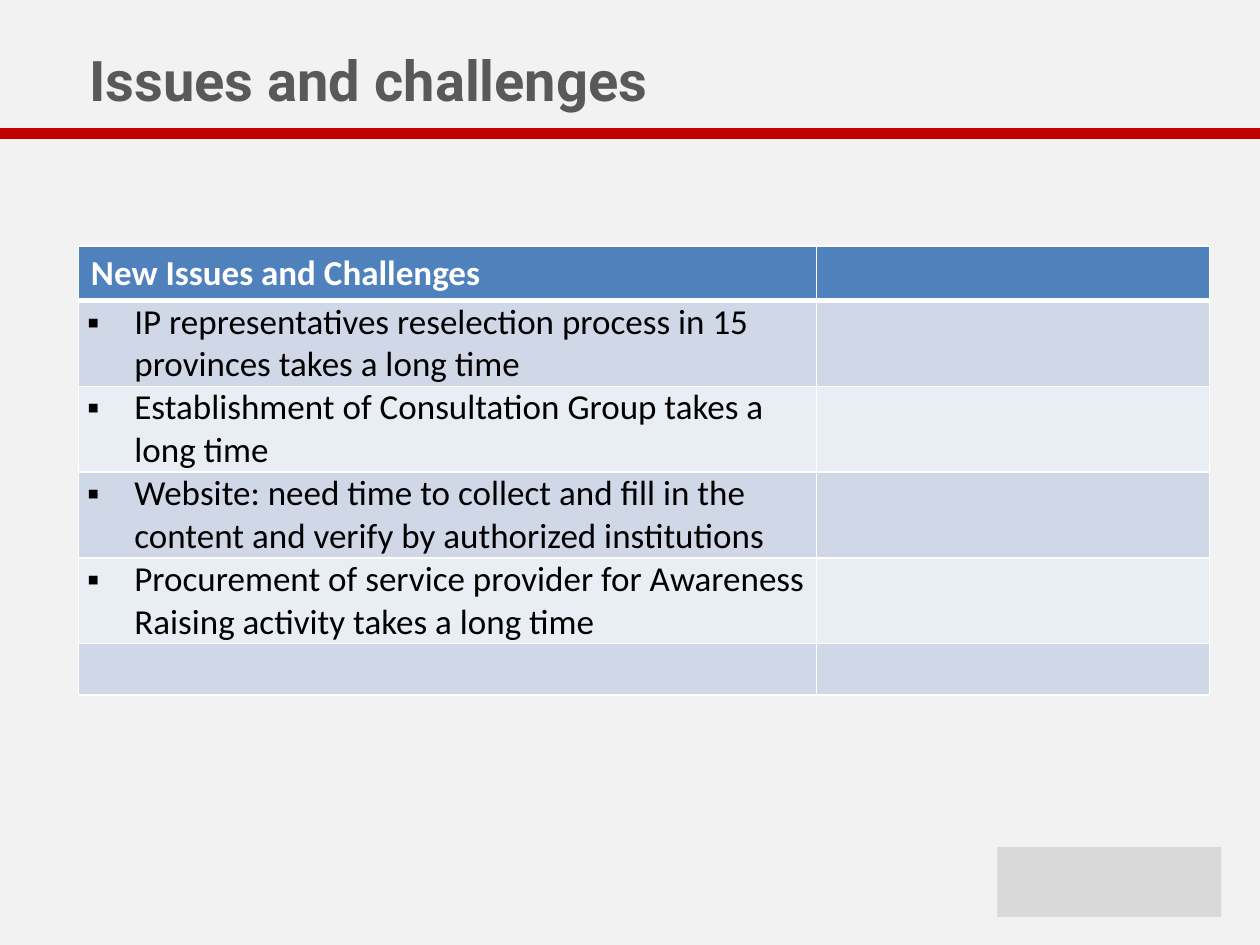
import pptx
import pptx.dml.color
import pptx.enum.shapes
import pptx.enum.text
import pptx.oxml
import pptx.oxml.ns
import pptx.util

Pt = pptx.util.Pt
MSO_SHAPE = pptx.enum.shapes.MSO_SHAPE

ISSUES = [
    "IP representatives reselection process in 15 provinces takes a long time",
    "Establishment of Consultation Group takes a long time",
    "Website: need time to collect and fill in the content and verify by authorized institutions",
    "Procurement of service provider for Awareness Raising activity takes a long time",
]
BANDS = ["D0D8E8", "E9EDF4"]
HEADER = "4F81BD"


def rgb(color):
    return pptx.dml.color.RGBColor.from_string(color)


def set_fill(target, color):
    target.fill.solid()
    target.fill.fore_color.rgb = rgb(color)


def add_run(p, text, size=20, font="Calibri", color="000000", bold=False):
    r = p.add_run()
    r.text = text
    r.font.size = Pt(size)
    r.font.name = font
    r.font.bold = bold
    r.font.color.rgb = rgb(color)


def add_block(slide, kind, left, top, width, height, color):
    s = slide.shapes.add_shape(kind, Pt(left), Pt(top), Pt(width), Pt(height))
    s.shadow.inherit = False
    set_fill(s, color)
    s.line.fill.background()


def add_title(slide, text):
    tf = slide.shapes.add_textbox(Pt(43.9), Pt(16.6), Pt(648), Pt(56.9)).text_frame
    tf.word_wrap = True
    tf.vertical_anchor = pptx.enum.text.MSO_ANCHOR.MIDDLE
    add_run(tf.paragraphs[0], text, size=32, font="Roboto", color="595959", bold=True)


def set_borders(cell, top=1, bottom=1):
    """Draw white borders, given their widths in points."""
    tc_pr = cell._tc.get_or_add_tcPr()
    for side, width in (("L", 1), ("R", 1), ("T", top), ("B", bottom)):
        tc_pr.append(pptx.oxml.parse_xml(
            f'<a:ln{side} {pptx.oxml.ns.nsdecls("a")} w="{Pt(width)}"><a:solidFill>'
            f'<a:srgbClr val="FFFFFF"/></a:solidFill></a:ln{side}>'))


def set_bullet(p, char, indent):
    p_pr = p._p.get_or_add_pPr()
    p_pr.set("marL", str(Pt(indent)))
    p_pr.set("indent", str(-Pt(indent)))
    for tag in ('buFont {} typeface="Arial"', f'buChar {{}} char="{char}"'):
        p_pr.append(pptx.oxml.parse_xml(
            f'<a:{tag.format(pptx.oxml.ns.nsdecls("a"))}/>'))


def add_issue_table(slide):
    heights = [31.2] + [49] * len(ISSUES) + [29.5]
    frame = slide.shapes.add_table(len(heights), 2, Pt(44.8), Pt(140.6),
                                   Pt(646.5), Pt(sum(heights)))
    table = frame.table
    for column, width in zip(table.columns, (421.9, 224.6)):
        column.width = Pt(width)
    for i, height in enumerate(heights):
        table.rows[i].height = Pt(height)
        for cell in table.rows[i].cells:
            set_borders(cell, top=3 if i == 1 else 1, bottom=3 if i == 0 else 1)
            set_fill(cell, BANDS[(i - 1) % 2] if i else HEADER)

    add_run(table.cell(0, 0).text_frame.paragraphs[0], "New Issues and Challenges",
            color="FFFFFF", bold=True)
    for i, issue in enumerate(ISSUES, 1):
        cell = table.cell(i, 0)
        cell.margin_left = cell.margin_right = Pt(5)
        cell.margin_top = cell.margin_bottom = 0
        p = cell.text_frame.paragraphs[0]
        set_bullet(p, "▪", 27)
        add_run(p, issue)


def main():
    prs = pptx.Presentation()
    prs.slide_width, prs.slide_height = Pt(720), Pt(540)
    slide = prs.slides.add_slide(prs.slide_layouts[6])
    set_fill(slide.background, "F2F2F2")

    add_block(slide, MSO_SHAPE.FLOWCHART_PROCESS, 0, 73.4, 720, 5.8, "C00000")
    add_block(slide, MSO_SHAPE.RECTANGLE, 570, 484, 128, 40, "D9D9D9")
    add_title(slide, "Issues and challenges")
    add_issue_table(slide)
    prs.save("out.pptx")


if __name__ == "__main__":
    main()
